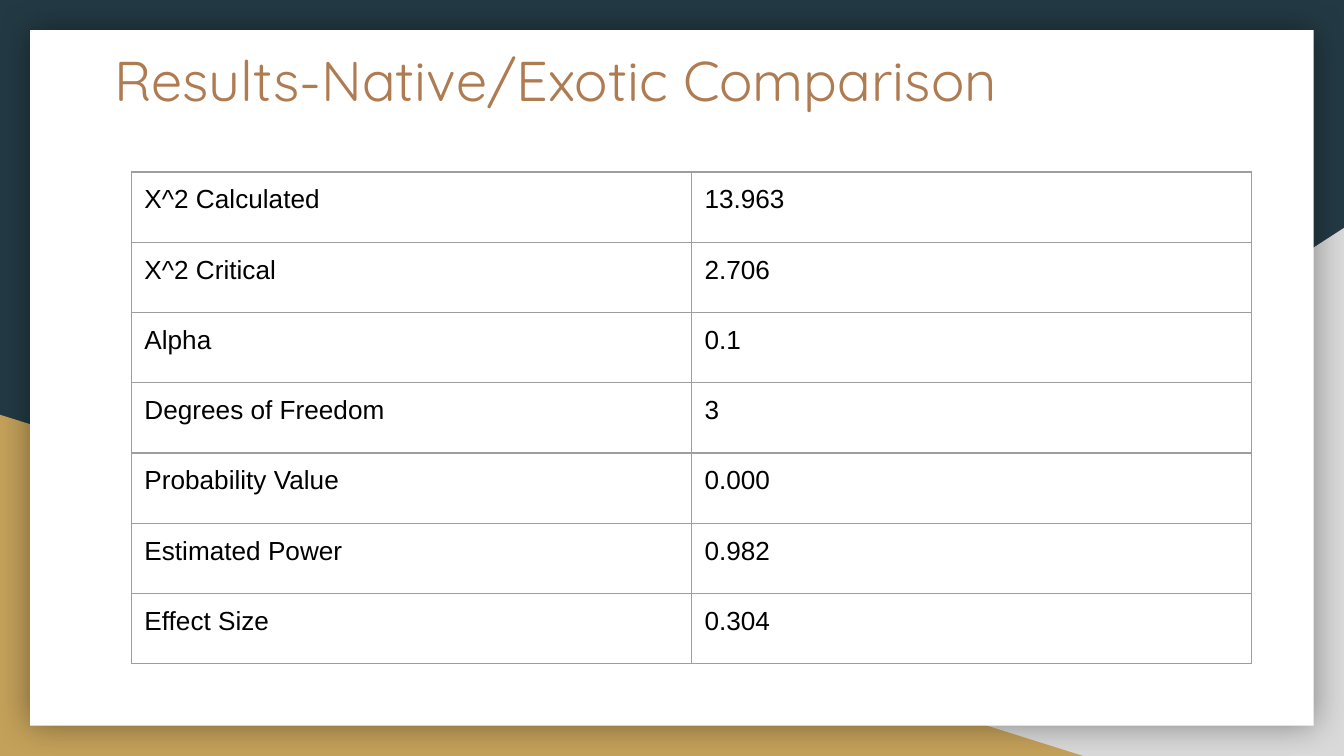
from dataclasses import dataclass

from lxml.etree import SubElement
from pptx import Presentation
from pptx.dml.color import RGBColor
from pptx.enum.shapes import MSO_SHAPE
from pptx.oxml import parse_xml
from pptx.oxml.ns import nsdecls, qn
from pptx.util import Cm, Pt


@dataclass(frozen=True)
class Theme:
    navy: str = "233A44"
    grey: str = "D9D9D9"
    gold: str = "C4A15A"
    white: str = "FFFFFF"
    brown: str = "AF7B51"
    black: str = "000000"
    rule: str = "9E9E9E"
    head: int = 30
    body: int = 14
    edge: float = 0.75
    blur: int = 18


THEME = Theme()
WIDE, HIGH = 25.4, 14.29
INSET = Cm(0.25)
ROWS = (
    ("X^2 Calculated", "13.963"),
    ("X^2 Critical", "2.706"),
    ("Alpha", "0.1"),
    ("Degrees of Freedom", "3"),
    ("Probability Value", "0.000"),
    ("Estimated Power", "0.982"),
    ("Effect Size", "0.304"),
)


def style(par, face, size, color):
    par.font.name = face
    par.font.size = Pt(size)
    par.font.color.rgb = RGBColor.from_string(color)


def pad(frame):
    frame.margin_left = frame.margin_right = INSET
    frame.margin_top = frame.margin_bottom = INSET


def block(slide, kind, box, color):
    shape = slide.shapes.add_shape(kind, *map(Cm, box))
    shape.shadow.inherit = False
    shape.fill.solid()
    shape.fill.fore_color.rgb = RGBColor.from_string(color)
    shape.line.fill.background()
    return shape


def glow(shape):
    effects = shape._element.spPr.find(qn("a:effectLst"))
    effects.append(parse_xml(
        f'<a:outerShdw {nsdecls("a")} blurRad="{Pt(THEME.blur)}" dist="0" '
        f'algn="ctr" rotWithShape="0"><a:srgbClr val="{THEME.black}">'
        '<a:alpha val="40000"/></a:srgbClr></a:outerShdw>'
    ))


def backdrop(slide, box):
    left, top, wide, high = box
    fill = slide.background.fill
    fill.solid()
    fill.fore_color.rgb = RGBColor.from_string(THEME.navy)
    right, low = left + wide, top + high
    wedge = MSO_SHAPE.RIGHT_TRIANGLE
    east = block(slide, wedge, (right - 15.44, low - 9.98, 15.44, 9.98), THEME.grey)
    east._element.spPr.xfrm.set("flipH", "1")
    block(slide, wedge, (left, low - 6.45, 20.47, 6.45), THEME.gold)
    gap = 0.57
    panel = (left + gap, top + gap, wide - 2 * gap, high - 2 * gap)
    glow(block(slide, MSO_SHAPE.RECTANGLE, panel, THEME.white))


def title(slide, box, text):
    frame = slide.shapes.add_textbox(*map(Cm, box)).text_frame
    frame.word_wrap = True
    pad(frame)
    par = frame.paragraphs[0]
    par.text = text
    style(par, "Quicksand", THEME.head, THEME.brown)


def border(cell):
    props = cell._tc.get_or_add_tcPr()
    for side in ("lnL", "lnR", "lnT", "lnB"):
        line = SubElement(props, qn(f"a:{side}"), w=str(Pt(THEME.edge)))
        fill = SubElement(line, qn("a:solidFill"))
        SubElement(fill, qn("a:srgbClr"), val=THEME.rule)


def results(slide, box, rows):
    frame = slide.shapes.add_table(len(rows), len(rows[0]), *map(Cm, box))
    table = frame.table
    table.first_row = table.horz_banding = False
    for row, texts in zip(table.rows, rows):
        for cell, text in zip(row.cells, texts):
            pad(cell)
            border(cell)
            cell.fill.background()
            cell.text = text
            style(cell.text_frame.paragraphs[0], "Arial", THEME.body, THEME.black)


def main():
    deck = Presentation()
    deck.slide_width, deck.slide_height = Cm(WIDE), Cm(HIGH)
    slide = deck.slides.add_slide(deck.slide_layouts[6])
    backdrop(slide, (0, 0, WIDE, HIGH))
    title(slide, (1.91, 0.61, 20.85, 2.64), "Results-Native/Exotic Comparison")
    results(slide, (2.48, 3.25, 21.17, 9.3), ROWS)
    deck.save("out.pptx")


if __name__ == "__main__":
    main()
